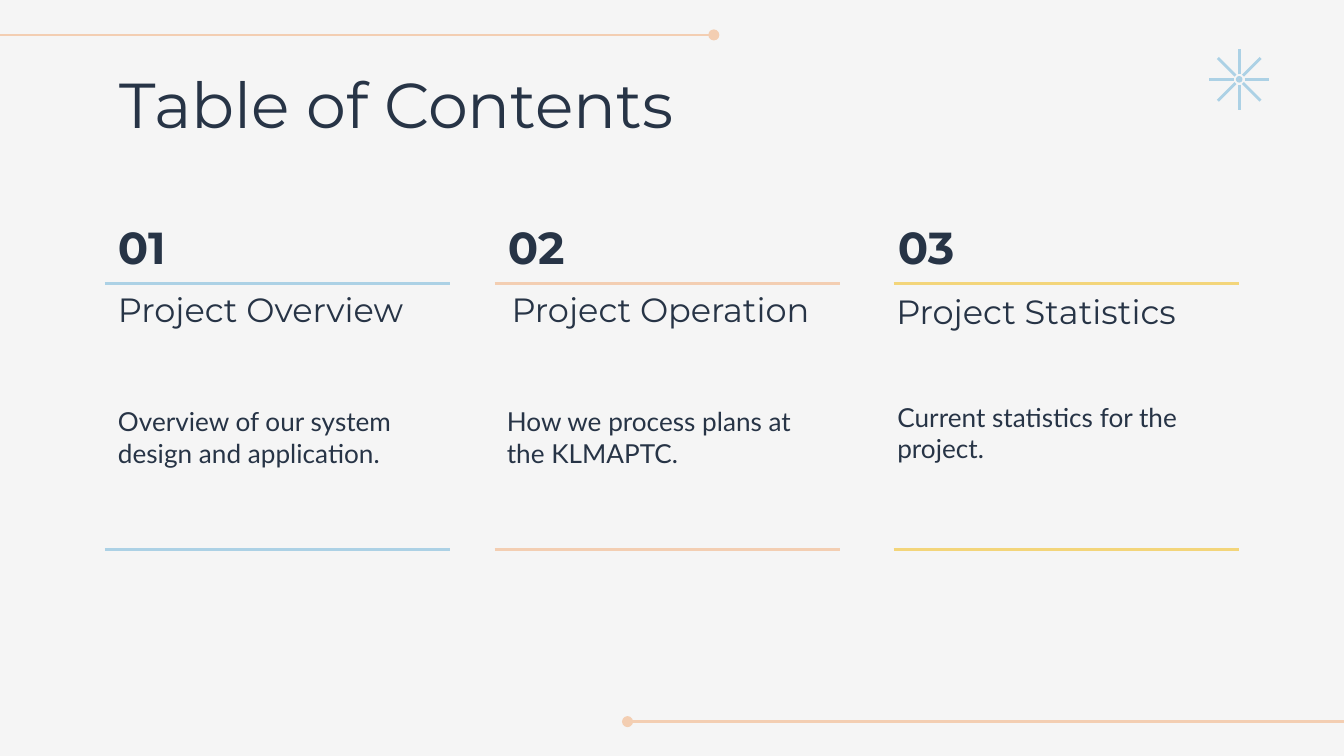
import math

import pptx
import pptx.dml.color
import pptx.enum.shapes
import pptx.enum.text
import pptx.oxml
import pptx.oxml.ns
import pptx.util
from pptx.util import Cm

NS = pptx.oxml.ns.nsdecls("a")
INK, BLUE, PEACH, YELLOW = "273446", "ACD1E5", "F3CEB2", "F3D57A"
rgb = pptx.dml.color.RGBColor.from_string
anchor = pptx.enum.text.MSO_ANCHOR


def add_line(x1, y1, x2, y2, color, dot=None):
    c = s.shapes.add_connector(pptx.enum.shapes.MSO_CONNECTOR.STRAIGHT,
                               Cm(x1), Cm(y1), Cm(x2), Cm(y2))
    c.line.color.rgb = rgb(color)
    c.line.width = pptx.util.Pt(1.5)
    if dot:
        c.line._get_or_add_ln().append(pptx.oxml.parse_xml(f'<a:{dot} {NS} type="oval"/>'))
    c._element.spPr.append(pptx.oxml.parse_xml(f"<a:effectLst {NS}/>"))


def write(sp, text, font, anchor_at, spacing=1.0):
    tf = sp.text_frame
    frame = {"word_wrap": True, "auto_size": pptx.enum.text.MSO_AUTO_SIZE.NONE,
             "vertical_anchor": anchor_at}
    for side in ("left", "top", "right", "bottom"):
        frame[f"margin_{side}"] = Cm(0.25)
    for name, value in frame.items():
        setattr(tf, name, value)
    p = tf.paragraphs[0]
    p.alignment = pptx.enum.text.PP_ALIGN.LEFT
    p.line_spacing = spacing
    r = p.add_run()
    r.text = text
    for name, value in font.items():
        setattr(r.font, name, value)
    r.font.color.rgb = rgb(INK)
    return r


prs = pptx.Presentation()
prs.slide_width, prs.slide_height = Cm(25.4), Cm(14.29)
s = prs.slides.add_slide(prs.slide_layouts[5])
s.background.fill.solid()
s.background.fill.fore_color.rgb = rgb("F5F5F5")

# Edge lines with round ends
add_line(0, 0.66, 13.49, 0.66, PEACH, "tailEnd")
add_line(11.86, 13.64, 25.4, 13.64, PEACH, "headEnd")

# Starburst: eight rays around a dot
cx, cy, inner, outer, dot = 23.42, 1.5, 0.1, 0.57, 0.07
for i in range(8):
    dx, dy = math.cos(i * math.pi / 4), math.sin(i * math.pi / 4)
    add_line(cx + inner * dx, cy + inner * dy, cx + outer * dx, cy + outer * dy, BLUE)
sp = s.shapes.add_shape(pptx.enum.shapes.MSO_SHAPE.OVAL,
                        Cm(cx - dot / 2), Cm(cy - dot / 2), Cm(dot), Cm(dot))
sp.shadow.inherit = False
sp.fill.solid()
sp.fill.fore_color.rgb = rgb("FCA8A2")
sp.line.color.rgb = rgb(BLUE)
sp.line.width = pptx.util.Pt(1.5)

# Title with a soft text shadow
sp = s.shapes.title
sp.left, sp.top, sp.width, sp.height = Cm(2.01), Cm(1.24), Cm(21.41), Cm(1.6)
r = write(sp, "Table of Contents", {"name": "Montserrat", "size": pptx.util.Pt(34)},
          anchor.MIDDLE, 0.9)
fill = r.font._element.find(pptx.oxml.ns.qn("a:solidFill"))
fill.addnext(pptx.oxml.parse_xml(
    f'<a:effectLst {NS}><a:outerShdw blurRad="38100" dist="38100" dir="2700000">'
    '<a:srgbClr val="000000"><a:alpha val="43000"/></a:srgbClr>'
    '</a:outerShdw></a:effectLst>'))

# Three sections: number, heading and description between two rules
number_font = {"name": "Montserrat", "size": pptx.util.Pt(24), "bold": True}
heading_font = {"name": "Montserrat", "size": pptx.util.Pt(18)}
body_font = {"name": "Lato", "size": pptx.util.Pt(14)}
# Rule x, colour, then (x, y, text) of heading and description
sections = [
    (1.98, BLUE, (1.98, 5.13, "Project Overview"),
     (1.98, 7.42, "Overview of our system design and application.")),
    (9.35, PEACH, (9.42, 5.13, "Project Operation"),
     (9.33, 7.42, "How we process plans at the KLMAPTC.")),
    (16.89, YELLOW, (16.69, 5.16, "Project Statistics"),
     (16.71, 7.34, "Current statistics for the project.")),
]
for i, (rule_x, color, heading, body) in enumerate(sections):
    number = (1.98 + i * 7.37, 3.91, f"{i + 1:02}")
    for (x, y, text), height, font, at, spacing in (
            (number, 1.65, number_font, anchor.MIDDLE, 0.9),
            (heading, 1.35, heading_font, anchor.BOTTOM, 1.0),
            (body, 1.35, body_font, anchor.TOP, 1.0)):
        sp = s.shapes.add_textbox(Cm(x), Cm(y), Cm(6.71), Cm(height))
        write(sp, text, font, at, spacing)
    for y in (5.36, 10.39):
        add_line(rule_x, y, rule_x + 6.53, y, color)

prs.save("out.pptx")
